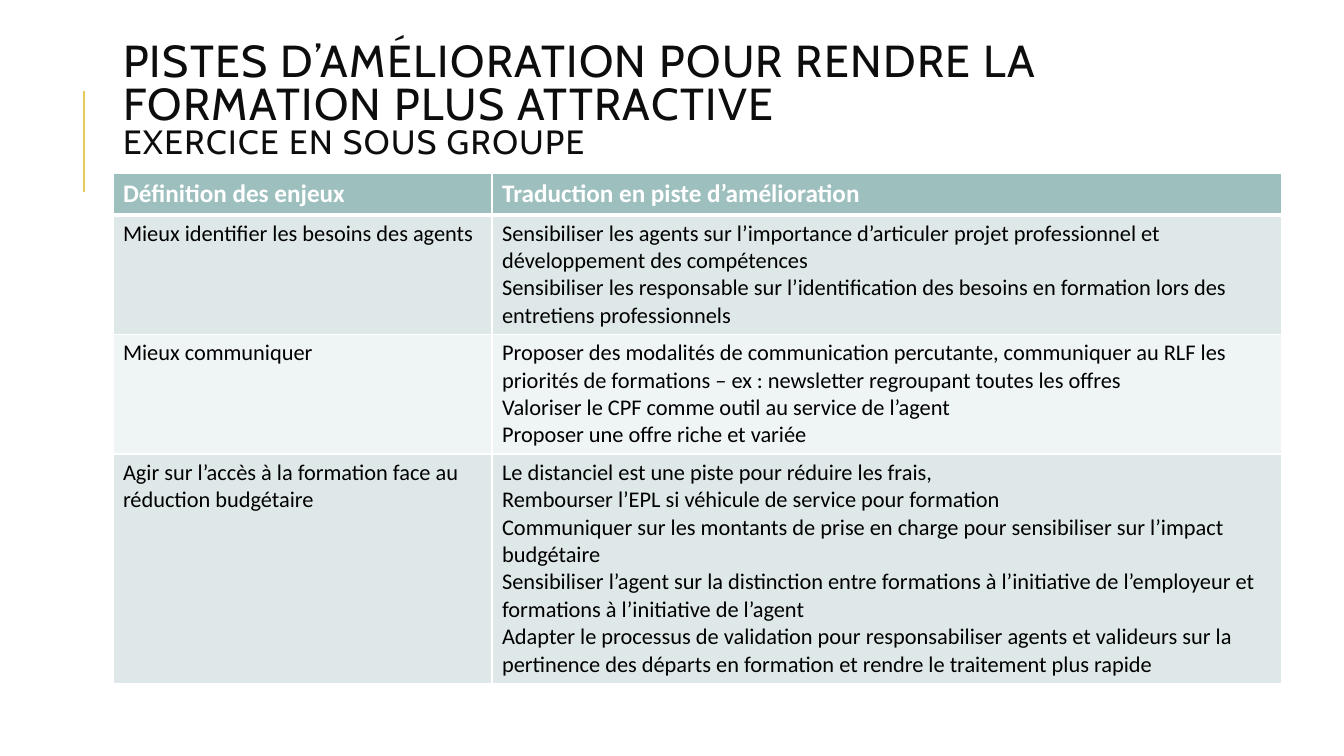
from lxml.etree import SubElement
from pptx import Presentation
from pptx.dml.color import RGBColor
from pptx.enum.shapes import MSO_CONNECTOR as CONN
from pptx.enum.text import MSO_ANCHOR as ANCHOR, MSO_AUTO_SIZE as AUTOSIZE, PP_ALIGN as ALIGN
from pptx.oxml.ns import qn
from pptx.util import Inches, Pt

ROWS = [
    (["Définition des enjeux"], ["Traduction en piste d’amélioration"]),
    (["Mieux identifier les besoins des agents"],
     ["Sensibiliser les agents sur l’importance d’articuler projet professionnel et "
      "développement des compétences",
      "Sensibiliser les responsable sur l’identification des besoins en formation lors des "
      "entretiens professionnels"]),
    (["Mieux communiquer"],
     ["Proposer des modalités de communication percutante, communiquer au RLF les "
      "priorités de formations – ex : newsletter regroupant toutes les offres",
      "Valoriser le CPF comme outil au service de l’agent",
      "Proposer une offre riche et variée"]),
    (["Agir sur l’accès à la formation face au réduction budgétaire"],
     ["Le distanciel est une piste pour réduire les frais,",
      "Rembourser l’EPL si véhicule de service pour formation",
      "Communiquer sur les montants de prise en charge pour sensibiliser sur l’impact "
      "budgétaire",
      "Sensibiliser l’agent sur la distinction entre formations à l’initiative de "
      "l’employeur et formations à l’initiative de l’agent",
      "Adapter le processus de validation pour responsabiliser agents et valideurs sur la "
      "pertinence des départs en formation et rendre le traitement plus rapide"]),
]
ROW_FILLS = ["9DBFBE", "DFE8E8", "EFF4F4", "DFE8E8"]


def rgb(value):
    return RGBColor.from_string(value)


def add_run(p, text, font, size, color, bold=False):
    r = p.add_run()
    r.text = text
    r.font.name = font
    r.font.size = Pt(size)
    r.font.bold = bold
    r.font.color.rgb = rgb(color)
    return r


prs = Presentation()
prs.slide_width, prs.slide_height = Inches(13.33), Inches(7.5)
slide = prs.slides.add_slide(prs.slide_layouts[5])

# Accent line
accent = slide.shapes.add_connector(
    CONN.STRAIGHT, Inches(0.83), Inches(1.9), Inches(0.83), Inches(0.9))
accent.line.color.rgb = rgb("E3CC5A")
accent.line.width = Pt(1.5)
SubElement(accent._element.spPr, qn("a:effectLst"))

# Title
title = slide.shapes.title
title.left, title.top = Inches(1.12), Inches(0.19)
title.width, title.height = Inches(10.63), Inches(1.64)
tf = title.text_frame
tf.word_wrap = True
tf.auto_size = AUTOSIZE.NONE
tf.vertical_anchor = ANCHOR.MIDDLE
p = tf.paragraphs[0]
p.alignment = ALIGN.LEFT
p.line_spacing = 0.8
heading = add_run(p, "PISTES D’AMÉLIORATION POUR RENDRE LA FORMATION PLUS ATTRACTIVE",
                  "Cabin", 32, "0D0D0D")
p.add_line_break()
subheading = add_run(p, "EXERCICE EN SOUS GROUPE", "Cabin", 24, "0D0D0D")
for r in (heading, subheading):
    r.font._element.set("spc", "100")

# Table of issues and improvements
table = slide.shapes.add_table(
    len(ROWS), 2, Inches(1.12), Inches(1.72), Inches(11.59), Inches(1.64)).table
table.columns[0].width, table.columns[1].width = Inches(3.76), Inches(7.83)
for i, (row, fill) in enumerate(zip(ROWS, ROW_FILLS)):
    table.rows[i].height = Inches(0.41)
    header = i == 0
    widths = {"L": 1, "R": 1, "T": 3 if i == 1 else 1, "B": 3 if header else 1}
    for j, paragraphs in enumerate(row):
        cell = table.cell(i, j)
        tcPr = cell._tc.get_or_add_tcPr()
        for side, width in widths.items():
            ln = SubElement(tcPr, qn(f"a:ln{side}"), w=str(Pt(width)))
            SubElement(SubElement(ln, qn("a:solidFill")), qn("a:srgbClr"), val="FFFFFF")
        cell.fill.solid()
        cell.fill.fore_color.rgb = rgb(fill)
        tf = cell.text_frame
        for k, text in enumerate(paragraphs):
            p = tf.add_paragraph() if k else tf.paragraphs[0]
            add_run(p, text, "Calibri", 18 if header else 16,
                    "FFFFFF" if header else "000000", header)

prs.save("out.pptx")
